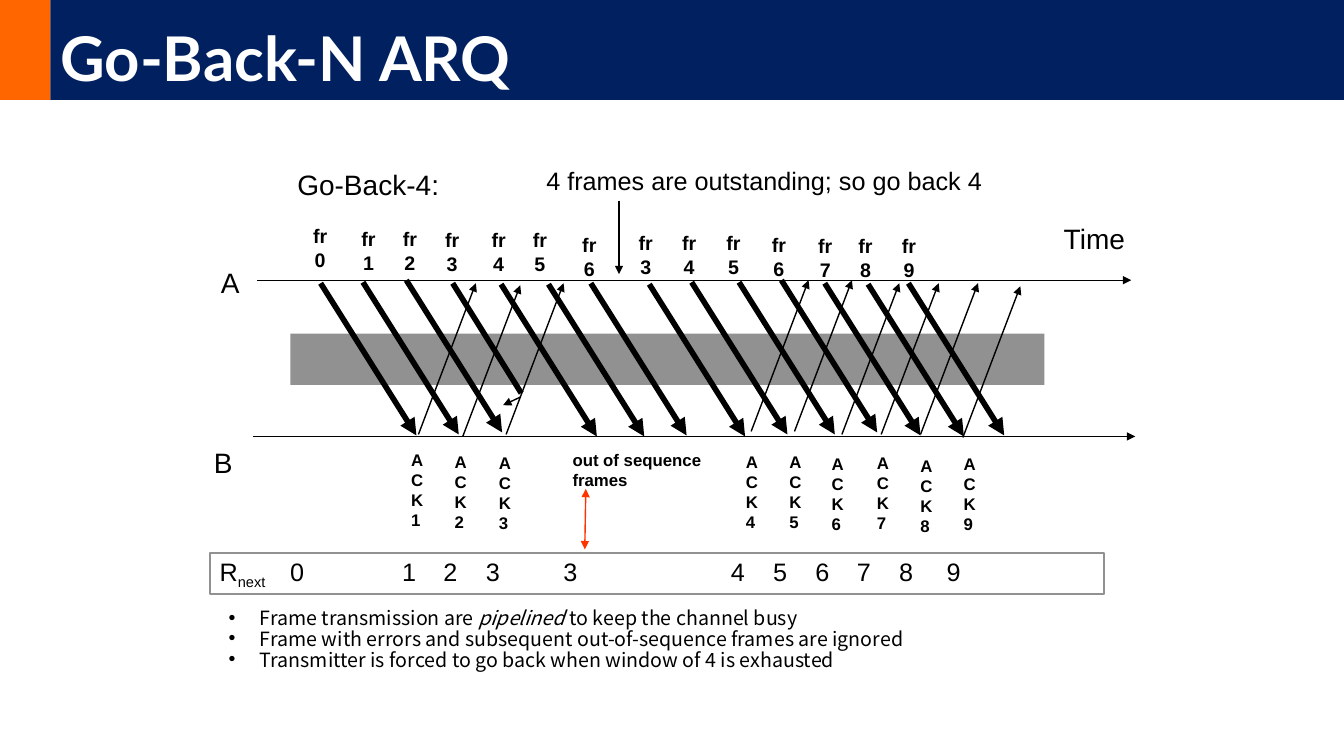
from dataclasses import dataclass

from lxml import etree
from pptx import Presentation
from pptx import util as u
from pptx.dml.color import RGBColor
from pptx.enum import shapes, text
from pptx.oxml import ns

BLACK = RGBColor(0x00, 0x00, 0x00)
WHITE = RGBColor(0xFF, 0xFF, 0xFF)
GRAY = RGBColor(0x91, 0x91, 0x91)
NAVY = RGBColor(0x00, 0x20, 0x60)
ORANGE = RGBColor(0xFF, 0x66, 0x00)
RED = RGBColor(0xFF, 0x33, 0x00)


@dataclass
class Label:
    content: str
    left: float
    top: float
    width: float
    height: float
    size: int
    bold: bool = False
    wrap: bool = False
    centered: bool = False
    inset: float = 0.1


@dataclass
class Line:
    x1: float
    y1: float
    x2: float
    y2: float
    width: float = 1
    color: RGBColor = BLACK
    head: bool = False
    tail: bool = True


@dataclass
class Frame:
    number: int
    label_left: float
    label_top: float
    x: float
    y: float
    lost: bool = False


@dataclass
class Ack:
    number: int
    label_left: float
    label_top: float
    x: float
    y: float


FRAMES = [
    Frame(0, 2.95, 2.15, 3.18, 2.81),
    Frame(1, 3.43, 2.18, 3.6, 2.8),
    Frame(2, 3.84, 2.18, 4.03, 2.78),
    Frame(3, 4.26, 2.19, 4.49, 2.81, lost=True),
    Frame(4, 4.72, 2.19, 4.97, 2.82),
    Frame(5, 5.13, 2.19, 5.44, 2.82),
    Frame(6, 5.62, 2.24, 5.86, 2.81),
    Frame(3, 6.18, 2.22, 6.44, 2.82),
    Frame(4, 6.61, 2.22, 6.86, 2.8),
    Frame(5, 7.05, 2.22, 7.33, 2.8),
    Frame(6, 7.5, 2.24, 7.75, 2.78),
    Frame(7, 7.96, 2.25, 8.18, 2.81),
    Frame(8, 8.36, 2.25, 8.61, 2.82),
    Frame(9, 8.79, 2.25, 9.01, 2.81),
]
ACKS = [
    Ack(1, 3.98, 4.41, 4.15, 4.31),
    Ack(2, 4.41, 4.43, 4.59, 4.33),
    Ack(3, 4.85, 4.44, 5.02, 4.31),
    Ack(4, 7.3, 4.43, 7.45, 4.28),
    Ack(5, 7.73, 4.43, 7.88, 4.28),
    Ack(6, 8.15, 4.45, 8.35, 4.31),
    Ack(7, 8.6, 4.44, 8.74, 4.31),
    Ack(8, 9.03, 4.47, 9.13, 4.31),
    Ack(9, 9.46, 4.45, 9.55, 4.34),
]
LABELS = [
    Label("A", 2.04, 2.56, 0.49, 0.49, 20, inset=0.15),
    Label("B", 1.97, 4.34, 0.49, 0.49, 20, inset=0.15),
    Label("Time", 10.4, 2.12, 0.92, 0.49, 20, inset=0.15),
    Label("Go-Back-4:", 2.85, 1.61, 1.62, 0.43, 20),
    Label("4 frames are outstanding; so go back 4", 5.32, 1.59, 4.56, 0.4, 18),
    Label("out of sequence frames", 5.58, 4.41, 1.68, 0.5, 12, bold=True, wrap=True),
]
LINES = [
    Line(2.55, 2.78, 11.22, 2.78),
    Line(2.51, 4.33, 11.26, 4.33),
    Line(5.16, 3.94, 4.99, 4.02),
    Line(6.14, 1.99, 6.14, 2.72),
    Line(5.8, 5.45, 5.81, 4.85, color=RED, head=True),
]
R_NEXT = {0: "0", 0.7: "0"}
R_NEXT_VALUES = [0, 1, 2, 3, 3, 4, 5, 6, 7, 8, 9]
R_NEXT_TABS = [0.7, 1.81, 2.22, 2.64, 3.41, 5.07, 5.49, 5.91, 6.32, 6.74, 7.21]
BULLETS = [
    [("Frame transmission are ", False), ("pipelined ", True),
     ("to keep the channel busy", False)],
    [("Frame with errors and subsequent out-of-sequence frames are ignored", False)],
    [("Transmitter is forced to go back when window of 4 is exhausted", False)],
]


def add_run(paragraph, content: str, size: int, font: str = "Arial",
            color: RGBColor = BLACK, bold: bool = False, italic: bool = False):
    run = paragraph.add_run()
    run.text = content
    run.font.size = u.Pt(size)
    run.font.name = font
    run.font.color.rgb = color
    run.font.bold = bold
    run.font.italic = italic
    return run


def add_rectangle(slide, left: float, top: float, width: float, height: float,
                  fill: RGBColor | None = None):
    shape = slide.shapes.add_shape(
        shapes.MSO_SHAPE.RECTANGLE,
        *map(u.Inches, (left, top, width, height)))
    shape.shadow.inherit = False
    shape.line.fill.background()
    if fill is None:
        shape.fill.background()
    else:
        shape.fill.solid()
        shape.fill.fore_color.rgb = fill
    return shape


def add_label(slide, label: Label) -> None:
    shape = slide.shapes.add_textbox(
        *map(u.Inches, (label.left, label.top, label.width, label.height)))
    frame = shape.text_frame
    frame.word_wrap = label.wrap
    frame.auto_size = text.MSO_AUTO_SIZE.SHAPE_TO_FIT_TEXT
    frame.margin_left = frame.margin_right = u.Inches(label.inset)
    frame.margin_top = frame.margin_bottom = u.Inches(label.inset / 2)
    for index, content in enumerate(label.content.split("\n")):
        paragraph = frame.add_paragraph() if index else frame.paragraphs[0]
        if label.centered:
            paragraph.alignment = text.PP_ALIGN.CENTER
        add_run(paragraph, content, label.size, bold=label.bold)


def add_line(slide, line: Line) -> None:
    connector = slide.shapes.add_connector(
        shapes.MSO_CONNECTOR.STRAIGHT,
        *map(u.Inches, (line.x1, line.y1, line.x2, line.y2)))
    connector.line.color.rgb = line.color
    connector.line.width = u.Pt(line.width)
    properties = connector.element.spPr
    outline = properties.find(ns.qn("a:ln"))
    for tag, shown in (("a:headEnd", line.head), ("a:tailEnd", line.tail)):
        if shown:
            etree.SubElement(outline, ns.qn(tag), type="triangle")
    etree.SubElement(properties, ns.qn("a:effectLst"))


def add_title(slide) -> None:
    add_rectangle(slide, 0, 0, 0.5, 0.99, ORANGE)
    frame = add_rectangle(slide, 0.5, 0, 12.83, 0.99, NAVY).text_frame
    frame.vertical_anchor = text.MSO_ANCHOR.BOTTOM
    paragraph = frame.paragraphs[0]
    paragraph.alignment = text.PP_ALIGN.LEFT
    paragraph.line_spacing = 0.9
    add_run(paragraph, "Go-Back-N ARQ", 44, "Lato", WHITE, bold=True)


def add_r_next(slide) -> None:
    shape = add_rectangle(slide, 2.08, 5.49, 8.87, 0.4)
    shape.line.color.rgb = GRAY
    shape.line.width = u.Pt(1.5)
    paragraph = shape.text_frame.paragraphs[0]
    paragraph.alignment = text.PP_ALIGN.LEFT
    add_run(paragraph, "R", 18)
    subscript = add_run(paragraph, "next", 18)
    subscript.font._element.set("baseline", "-25000")
    add_run(paragraph, "".join(f"\t{value}" for value in R_NEXT_VALUES), 18)
    properties = paragraph._p.get_or_add_pPr()
    tabs = etree.SubElement(properties, ns.qn("a:tabLst"))
    for position in R_NEXT_TABS:
        etree.SubElement(tabs, ns.qn("a:tab"), pos=str(u.Inches(position)), algn="l")


def add_bullets(slide) -> None:
    frame = slide.shapes.add_textbox(
        *map(u.Inches, (1.67, 6.03, 10.06, 0.79))).text_frame
    frame.word_wrap = True
    for index, runs in enumerate(BULLETS):
        paragraph = frame.add_paragraph() if index else frame.paragraphs[0]
        paragraph.line_spacing = 0.7
        paragraph.space_before = u.Pt(3)
        for content, italic in runs:
            add_run(paragraph, content, 14, "Noto Sans CJK KR", italic=italic)
        properties = paragraph._p.get_or_add_pPr()
        properties.set("marL", str(u.Inches(0.81)))
        properties.set("indent", str(u.Inches(-0.31)))
        etree.SubElement(properties, ns.qn("a:buFont"), typeface="Arial")
        etree.SubElement(properties, ns.qn("a:buChar"), char="•")


def main() -> None:
    presentation = Presentation()
    presentation.slide_width = u.Inches(13.33)
    presentation.slide_height = u.Inches(7.5)
    slide = presentation.slides.add_slide(presentation.slide_layouts[6])
    add_title(slide)
    add_bullets(slide)
    add_rectangle(slide, 2.88, 3.31, 7.48, 0.51, GRAY)
    for line in LINES:
        add_line(slide, line)
    for label in LABELS:
        add_label(slide, label)
    for frame in FRAMES:
        add_label(slide, Label(f"fr\n{frame.number}", frame.label_left, frame.label_top,
                               0.45, 0.62, 14, bold=True, centered=True, inset=0.15))
        run, drop = (0.68, 1.09) if frame.lost else (0.95, 1.51)
        add_line(slide, Line(frame.x, frame.y, frame.x + run, frame.y + drop,
                             width=4, tail=not frame.lost))
    for ack in ACKS:
        add_label(slide, Label(f"ACK{ack.number}", ack.label_left, ack.label_top,
                               0.24, 0.91, 12, bold=True, wrap=True))
        add_line(slide, Line(ack.x, ack.y, ack.x + 0.57, ack.y - 1.5))
    add_r_next(slide)
    add_bullets_done = None
    presentation.save("out.pptx")


if __name__ == "__main__":
    main()
